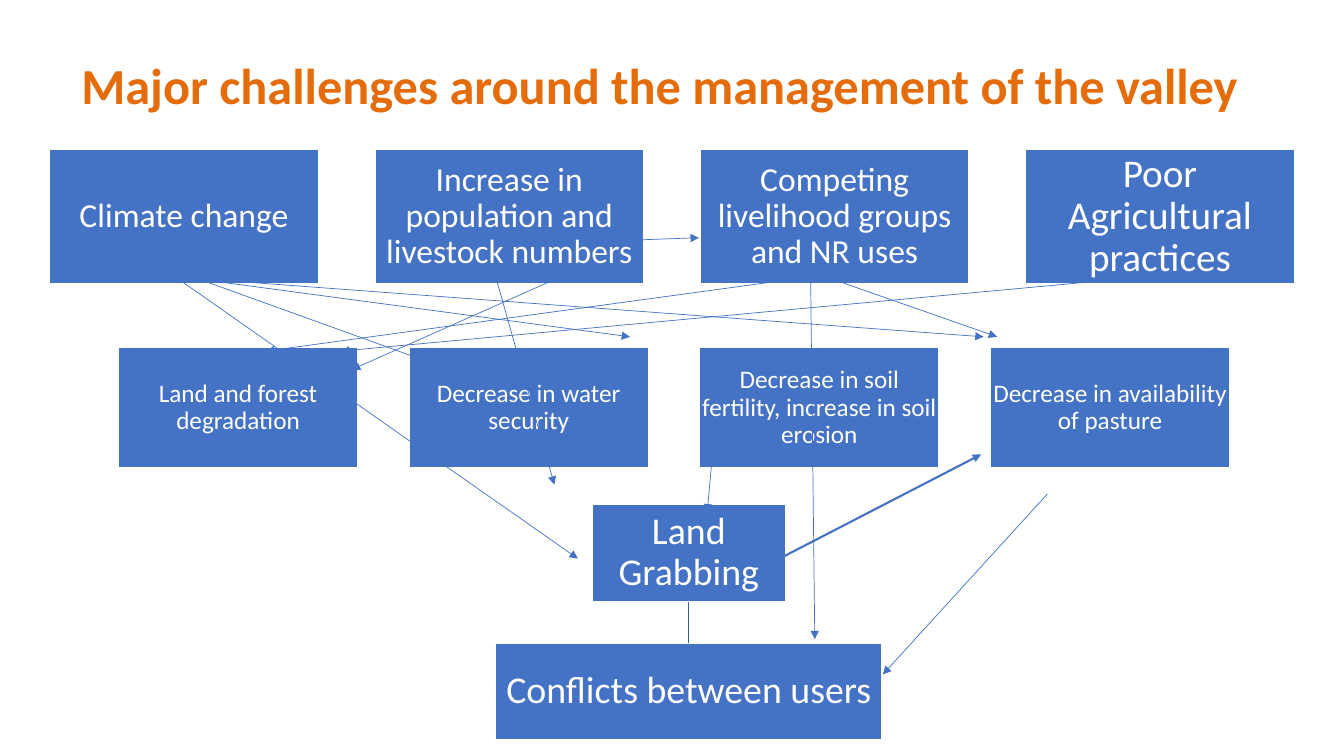
from dataclasses import dataclass

from lxml.etree import SubElement
from pptx import Presentation
from pptx.dml.color import RGBColor
from pptx.enum.shapes import MSO_CONNECTOR, MSO_SHAPE
from pptx.enum.text import MSO_ANCHOR, PP_ALIGN
from pptx.oxml.ns import qn
from pptx.util import Inches, Pt


@dataclass(frozen=True)
class Theme:
    font: str = "Calibri"
    blue: RGBColor = RGBColor(0x44, 0x72, 0xC4)
    dark_blue: RGBColor = RGBColor(0x36, 0x5B, 0x9D)
    orange: RGBColor = RGBColor(0xE4, 0x6C, 0x0A)
    white: RGBColor = RGBColor(0xFF, 0xFF, 0xFF)
    title: int = 36
    practice: int = 28
    outcome: int = 27
    driver: int = 24
    effect: int = 18
    thin: float = 0.5
    border: float = 1
    strong: float = 1.5


class Diagram:
    """Draws on a grid of 160 columns by 90 rows."""

    COLUMNS, ROWS = 160, 90

    def __init__(self, deck, theme):
        self.theme = theme
        self.cell_width = deck.slide_width / self.COLUMNS
        self.cell_height = deck.slide_height / self.ROWS
        self.shapes = deck.slides.add_slide(deck.slide_layouts[6]).shapes

    def place(self, column, row):
        return round(column * self.cell_width), round(row * self.cell_height)

    def set_text(self, frame, wording, size, color):
        frame.word_wrap = True
        frame.vertical_anchor = MSO_ANCHOR.MIDDLE
        paragraph = frame.paragraphs[0]
        paragraph.text = wording
        paragraph.font.name = self.theme.font
        paragraph.font.size = Pt(size)
        paragraph.font.color.rgb = color
        return paragraph

    def title(self, wording, column, row, width, height):
        heading = self.shapes.add_textbox(*self.place(column, row), *self.place(width, height))
        paragraph = self.set_text(heading.text_frame, wording, self.theme.title, self.theme.orange)
        paragraph.font.bold = True

    def box(self, wording, size, column, row, width, height, inset=0.02):
        box = self.shapes.add_shape(
            MSO_SHAPE.RECTANGLE, *self.place(column, row), *self.place(width, height))
        box.shadow.inherit = False
        box.fill.solid()
        box.fill.fore_color.rgb = self.theme.blue
        box.line.color.rgb = self.theme.white
        box.line.width = Pt(self.theme.border)
        frame = box.text_frame
        frame.margin_left = frame.margin_right = Inches(inset)
        frame.margin_top = frame.margin_bottom = Inches(inset)
        paragraph = self.set_text(frame, wording, size, self.theme.white)
        paragraph.alignment = PP_ALIGN.CENTER
        paragraph.line_spacing = 0.9

    def line(self, start, end, color, weight):
        line = self.shapes.add_connector(
            MSO_CONNECTOR.STRAIGHT, *self.place(*start), *self.place(*end))
        line.line.color.rgb = color
        line.line.width = Pt(weight)
        SubElement(line._element.spPr, qn("a:effectLst"))
        return line

    def arrow(self, start, end, weight):
        arrow = self.line(start, end, self.theme.blue, weight)
        outline = arrow._element.spPr.find(qn("a:ln"))
        SubElement(outline, qn("a:tailEnd"), type="triangle")


def main():
    theme = Theme()
    deck = Presentation()
    deck.slide_width, deck.slide_height = Inches(13.333), Inches(7.5)
    diagram = Diagram(deck, theme)

    drivers = [
        ("Climate change", theme.driver),
        ("Increase in population and livestock numbers", theme.driver),
        ("Competing livelihood groups and NR uses", theme.driver),
        ("Poor Agricultural practices", theme.practice),
    ]
    for index, (driver, size) in enumerate(drivers):
        diagram.box(driver, size, 5.9 + 38.73 * index, 17.8, 32, 16)

    diagram.title("Major challenges around the management of the valley", 8.5, 0, 151.5, 20)

    effects = [
        "Land and forest degradation",
        "Decrease in water security",
        "Decrease in soil fertility, increase in soil erosion",
        "Decrease in availability of pasture",
    ]
    for index, effect in enumerate(effects):
        diagram.box(effect, theme.effect, 14.1 + 34.6 * index, 41.4, 28.5, 14.3, inset=0.01)

    diagram.line((82, 71.6), (82, 76.6), theme.dark_blue, theme.border)
    diagram.box("Land Grabbing", theme.outcome, 70.5, 60.1, 23, 11.5)
    diagram.box("Conflicts between users", theme.outcome, 59, 76.6, 46, 11.5)

    diagram.arrow((93, 66.4), (116.8, 54.1), theme.strong)
    influences = [
        ((124.7, 58.8), (105.1, 80.3)),
        ((21.2, 33.2), (68.8, 66.5)),
        ((23.6, 33.2), (56.6, 45.1)),
        ((23.4, 33.2), (75, 40.1)),
        ((24.1, 33.2), (117.1, 40.1)),
        ((66.2, 33.2), (41.9, 44)),
        ((99, 33.2), (118.7, 40.1)),
        ((92.5, 33.5), (31.7, 41.8)),
        ((85.2, 49.8), (84.2, 61)),
        ((58.8, 32.2), (66, 57.7)),
        ((140.2, 32.6), (40.6, 41.8)),
        ((96.5, 32.5), (97, 76.1)),
        ((75, 28.6), (83.2, 28.3)),
    ]
    for start, end in influences:
        diagram.arrow(start, end, theme.thin)

    deck.save("out.pptx")


if __name__ == "__main__":
    main()
